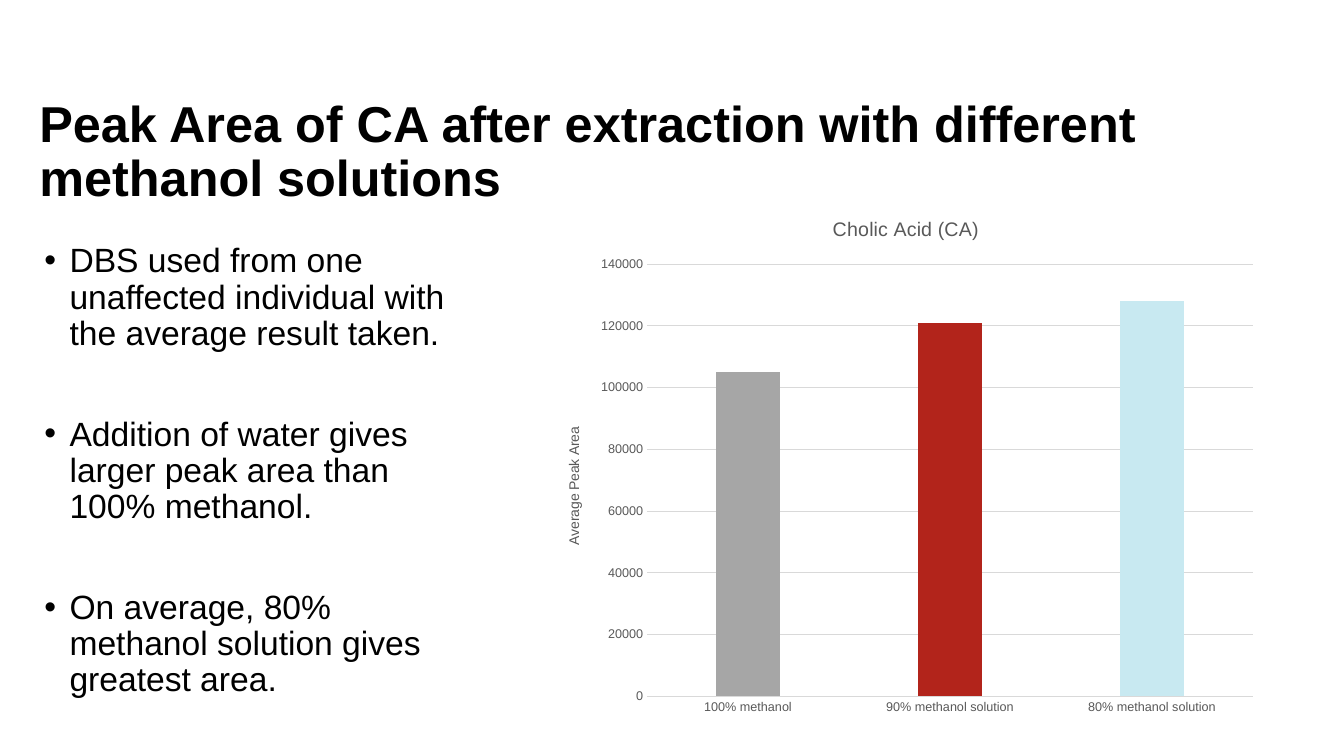
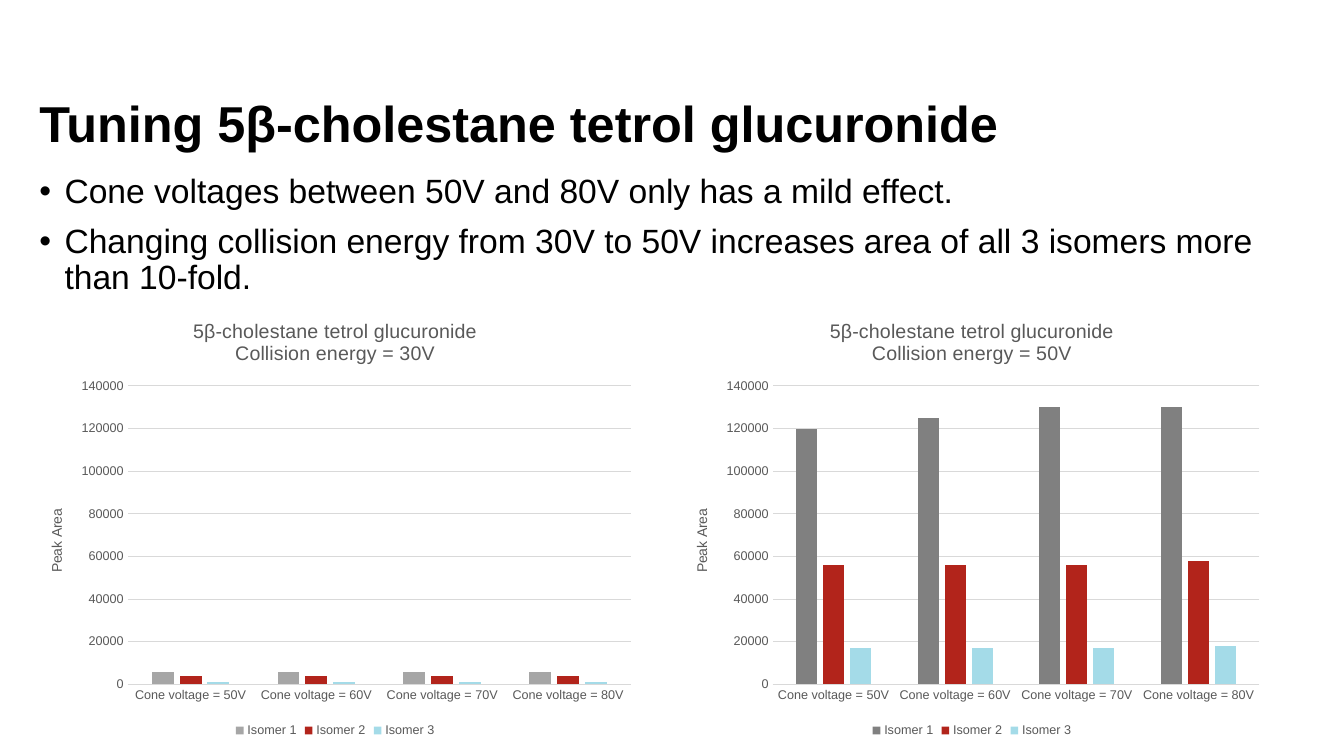
from dataclasses import dataclass

from lxml import etree
from pptx import Presentation
from pptx.chart.data import CategoryChartData
from pptx.dml.color import RGBColor
from pptx.enum.chart import XL_CHART_TYPE, XL_LEGEND_POSITION, XL_TICK_MARK
from pptx.enum.text import MSO_ANCHOR
from pptx.oxml.ns import qn
from pptx.util import Emu, Pt

COLUMNS = XL_CHART_TYPE.COLUMN_CLUSTERED
LEGEND_BOTTOM = XL_LEGEND_POSITION.BOTTOM
NO_TICK = XL_TICK_MARK.NONE
TOP = MSO_ANCHOR.TOP

EMU_PER_PX = 9144
SLIDE_SIZE = (1333, 750)
BLANK_LAYOUT = 6


@dataclass(frozen=True)
class Theme:
    font: str = "Arial"
    text: str = "000000"
    muted: str = "595959"
    rule: str = "D9D9D9"
    grey: str = "A6A6A6"
    dark_grey: str = "808080"
    red: str = "B2241B"
    blue: str = "A4DBE8"
    pale_blue: str = "C8E9F1"
    title_size: int = 36
    body_size: int = 24
    chart_title_size: int = 14
    axis_title_size: int = 10
    label_size: int = 9
    line_spacing: float = 0.9
    bullet_indent: int = 25
    bullet_gap: int = 10
    wide_bullet_gap: int = 46


THEME = Theme()


def px(length):
    return Emu(length * EMU_PER_PX)


def style_font(font, size, color, bold=False):
    font.name = THEME.font
    font.size = Pt(size)
    font.bold = bold
    font.color.rgb = RGBColor.from_string(color)


def add_text(slide, box, text):
    frame = slide.shapes.add_textbox(*map(px, box)).text_frame
    frame.word_wrap = True
    frame.vertical_anchor = TOP
    frame.margin_left = frame.margin_right = 0
    frame.margin_top = frame.margin_bottom = 0
    frame.text = text
    for paragraph in frame.paragraphs:
        paragraph.line_spacing = THEME.line_spacing
    return frame


def add_title(slide, box, text):
    heading = add_text(slide, box, text).paragraphs[0]
    style_font(heading.font, THEME.title_size, THEME.text, bold=True)


def add_bullets(slide, box, points, gap):
    frame = add_text(slide, box, "\n".join(points))
    for index, paragraph in enumerate(frame.paragraphs):
        if index:
            paragraph.space_before = Pt(gap)
        properties = paragraph._p.get_or_add_pPr()
        indent = px(THEME.bullet_indent)
        properties.set("marL", str(indent))
        properties.set("indent", str(-indent))
        etree.SubElement(properties, qn("a:buFont")).set("typeface", THEME.font)
        etree.SubElement(properties, qn("a:buChar")).set("char", "•")
        style_font(paragraph.font, THEME.body_size, THEME.text)


def set_chart_text(owner, text, size):
    """Write the title of a chart or of an axis."""
    owner.has_title = True
    title = owner.chart_title if hasattr(owner, "chart_title") else owner.axis_title
    title.text_frame.text = text
    for paragraph in title.text_frame.paragraphs:
        style_font(paragraph.font, size, THEME.muted)


def style_rule(line):
    line.color.rgb = RGBColor.from_string(THEME.rule)
    line.width = Pt(0.75)


def style_axes(chart, value_title):
    categories, values = chart.category_axis, chart.value_axis
    for axis in (categories, values):
        axis.major_tick_mark = axis.minor_tick_mark = NO_TICK
        style_font(axis.tick_labels.font, THEME.label_size, THEME.muted)
    style_rule(categories.format.line)
    values.format.line.fill.background()
    values.has_major_gridlines = True
    style_rule(values.major_gridlines.format.line)
    values.minimum_scale = 0
    values.maximum_scale = 140000
    values.major_unit = 20000
    set_chart_text(values, value_title, THEME.axis_title_size)


def add_column_chart(slide, box, title, value_title, categories, series):
    """Draw clustered columns; series maps each name to its values and colour."""
    data = CategoryChartData(number_format="0")
    data.categories = categories
    for name, (values, _) in series.items():
        data.add_series(name, values)
    chart = slide.shapes.add_chart(COLUMNS, *map(px, box), data).chart
    style_font(chart.font, THEME.axis_title_size, THEME.text)
    set_chart_text(chart, title, THEME.chart_title_size)
    chart.chart_title.include_in_layout = False
    style_axes(chart, value_title)

    plot = chart.plots[0]
    plot.vary_by_categories = False
    plot.gap_width = 219
    plot.overlap = -27
    for columns, (_, color) in zip(plot.series, series.values()):
        columns.format.fill.solid()
        columns.format.fill.fore_color.rgb = RGBColor.from_string(color)

    chart.has_legend = len(series) > 1
    if chart.has_legend:
        chart.legend.position = LEGEND_BOTTOM
        chart.legend.include_in_layout = False
        style_font(chart.legend.font, THEME.label_size, THEME.muted)
    return chart


def build_extraction_slide(slide):
    add_title(slide, (39, 98, 1262, 150),
              "Peak Area of CA after extraction with different methanol solutions")
    add_bullets(slide, (44, 242, 417, 465), [
        "DBS used from one unaffected individual with the average result taken.",
        "Addition of water gives larger peak area than 100% methanol.",
        "On average, 80% methanol solution gives greatest area.",
    ], THEME.wide_bullet_gap)
    chart = add_column_chart(
        slide, (540, 195, 717, 525), "Cholic Acid (CA)", "Average Peak Area",
        ["100% methanol", "90% methanol solution", "80% methanol solution"],
        {"Series 1": ([105000, 121000, 128000], THEME.grey)})
    solutions = chart.plots[0].series[0]
    for index, color in enumerate((THEME.grey, THEME.red, THEME.pale_blue)):
        fill = solutions.points[index].format.fill
        fill.solid()
        fill.fore_color.rgb = RGBColor.from_string(color)


def add_isomer_chart(slide, box, energy, areas, first_color):
    colors = (first_color, THEME.red, THEME.blue)
    isomers = {f"Isomer {number}": pair
               for number, pair in enumerate(zip(areas, colors), 1)}
    add_column_chart(
        slide, box,
        f"5β-cholestane tetrol glucuronide\nCollision energy = {energy}V", "Peak Area",
        [f"Cone voltage = {voltage}V" for voltage in range(50, 90, 10)], isomers)


def build_tuning_slide(slide):
    add_title(slide, (39, 98, 984, 150), "Tuning 5β-cholestane tetrol glucuronide")
    add_bullets(slide, (39, 173, 1240, 126), [
        "Cone voltages between 50V and 80V only has a mild effect.",
        "Changing collision energy from 30V to 50V increases area of all 3 isomers "
        "more than 10-fold.",
    ], THEME.bullet_gap)
    add_isomer_chart(slide, (27, 299, 611, 437), 30,
                     [[6000] * 4, [4000] * 4, [1000] * 4], THEME.grey)
    add_isomer_chart(slide, (667, 299, 594, 437), 50,
                     [[120000, 125000, 130000, 130000],
                      [56000, 56000, 56000, 58000],
                      [17000, 17000, 17000, 18000]], THEME.dark_grey)


def main():
    deck = Presentation()
    deck.slide_width, deck.slide_height = map(px, SLIDE_SIZE)
    for build in (build_extraction_slide, build_tuning_slide):
        build(deck.slides.add_slide(deck.slide_layouts[BLANK_LAYOUT]))
    deck.save("out.pptx")


if __name__ == "__main__":
    main()
